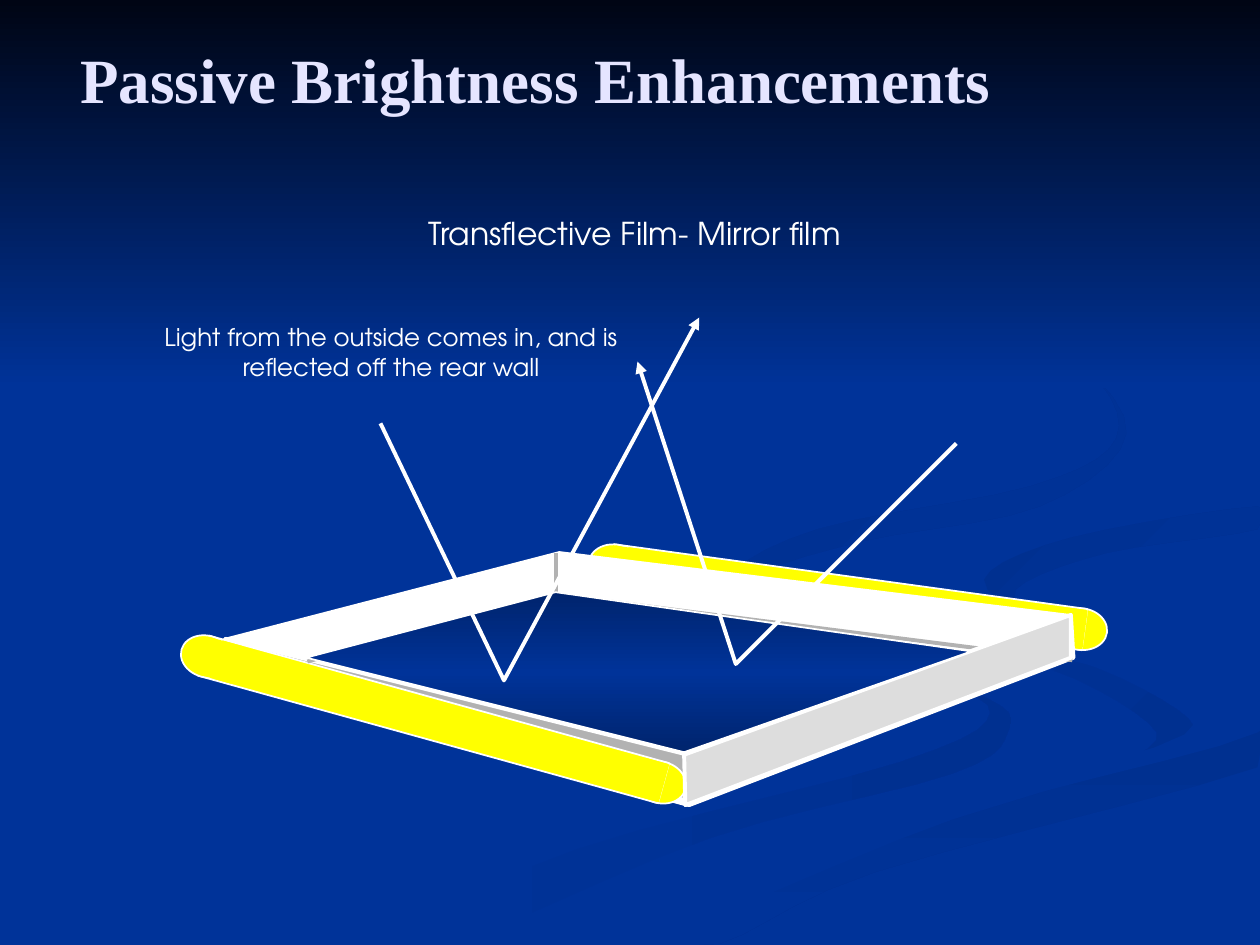
from copy import deepcopy
from math import cos, radians, sin

from pptx import Presentation
from pptx import util as u
from pptx.dml.color import RGBColor
from pptx.enum import shapes, text
from pptx.oxml import parse_xml
from pptx.oxml.ns import nsdecls, qn

BLUE = RGBColor(0x00, 0x33, 0x99)
SHADE = RGBColor(0x00, 0x30, 0x90)
NAVY = RGBColor(0x00, 0x24, 0x6D)
NIGHT = RGBColor(0x00, 0x05, 0x14)
LAVENDER = RGBColor(0xE5, 0xE5, 0xFF)
WHITE = RGBColor(0xFF, 0xFF, 0xFF)
YELLOW = RGBColor(0xFF, 0xFF, 0x00)
GRAY = RGBColor(0xB2, 0xB2, 0xB2)
LIGHT_GRAY = RGBColor(0xDD, 0xDD, 0xDD)

SERIF, SANS = "Times New Roman", "TeX Gyre Adventor"
TITLE = ("Passive Brightness Enhancements", (0, 0, 8.5, 1.25), 36, SERIF, LAVENDER)
LABELS = [
    ("Transflective Film- Mirror film", (3.15, 1.65, 3.77, 0.4), 18, SANS, WHITE),
    ("Light from the outside comes in, and is reflected off the rear wall",
     (1.14, 2.51, 3.93, 0.57), 14, SANS, WHITE),
]

SWIRLS = [
    ([(7.81, 5.53), (6.42, 5.07), (5.75, 4.6), (5.93, 4.91), (7.28, 5.35), (7.86, 5.66),
      (7.14, 6.05), (4.58, 6.74), (3, 7.49), (3.61, 7.49), (5.64, 6.65), (7.56, 6.14),
      (8, 5.81)], (BLUE, SHADE), 0),
    ([(9.43, 5.7), (8.7, 5.3), (7.58, 4.98), (7.24, 4.64), (7.55, 5.05), (8.54, 5.39),
      (9.18, 5.81), (8.94, 6.05), (9.32, 5.89)], (BLUE, SHADE), 45),
    ([(5.03, 7.49), (5.71, 7.49), (6.95, 6.92), (9.98, 6.09), (9.98, 5.81), (7.97, 6.38),
      (6.3, 6.93)], (SHADE, BLUE), 90),
    ([(7.25, 4.64), (7.93, 5.09), (9.05, 5.4), (9.4, 5.83), (7.43, 6.43), (4.77, 7.49),
      (5.19, 7.47), (7.65, 6.47), (9.99, 5.81), (9.99, 5.38), (8.48, 5.03), (7.82, 4.6),
      (8.65, 4.24), (9.99, 4.02), (9.99, 3.87), (8.08, 4.17)], (BLUE,), 0),
    ([(7.81, 4.6), (8.26, 4.96), (8.06, 4.68), (8.78, 4.39), (9.98, 4.2), (9.98, 4.02),
      (8.49, 4.27)], (SHADE, BLUE), 45),
    ([(6.83, 4.3), (8.25, 4.02), (8.94, 3.44), (8.43, 2.75), (7.62, 2.33), (8.62, 2.92),
      (8.86, 3.48), (8.18, 3.86), (6.49, 4.2), (5.77, 4.62), (6.22, 5), (5.96, 4.61)],
     (SHADE, BLUE), 45),
]
SKY = (0, 0, 10, 3.08)
CURVE_STEPS = 5

OVAL, BAR = shapes.MSO_SHAPE.OVAL, shapes.MSO_SHAPE.RECTANGLE
REAR_LAMP = (6.73, 4.74, 7.8)
FRONT_LAMP = (3.44, 5.71, 15.5)
LAMP_PARTS = [
    (OVAL, 1.87, 0.41, 0.33, WHITE), (BAR, 0, 3.79, 0.33, WHITE), (OVAL, -1.87, 0.41, 0.33, WHITE),
    (BAR, -1.75, 0.26, 0.31, None), (BAR, 1.8, 0.2, 0.31, None),
]

TRAY = [(4.44, 4.39), (1.78, 5.08), (1.79, 5.41), (5.47, 6.39), (8.52, 5.22), (8.5, 4.89)]
FRONT_WALL = [(1.79, 5.07), (1.82, 5.38), (5.47, 6.36), (5.46, 5.99)]
SIDE_WALL = [(5.43, 5.99), (5.44, 6.39), (8.5, 5.22), (8.5, 4.88)]
MIRROR = [(2.43, 5.22), (4.41, 4.7), (7.71, 5.17), (5.43, 5.97)]
INNER_CORNER = (4.41, 4.72)
INNER_ENDS = [(2.44, 5.25), (8.51, 5.24), (4.41, 4.39)]
RAYS = [[(3.02, 3.36), (4, 5.4), (5.55, 2.52)], [(7.59, 3.52), (5.84, 5.27), (5.06, 2.87)]]


def smooth(points):
    curve = []
    for index, start in enumerate(points):
        before, end = points[index - 1], points[(index + 1) % len(points)]
        after = points[(index + 2) % len(points)]
        for step in range(CURVE_STEPS):
            t = step / CURVE_STEPS
            x, y = (
                b + t / 2 * (c - a + t * (2 * a - 5 * b + 4 * c - d + t * (3 * b - a - 3 * c + d)))
                for a, b, c, d in zip(before, start, end, after)
            )
            curve.append((min(x, 10), min(y, 7.5)))
    return curve


def paint(shape, colours, angle=0, edge=None, width=2.25):
    shape.shadow.inherit = False
    if not colours:
        shape.fill.background()
    elif len(colours) == 1:
        shape.fill.solid()
        shape.fill.fore_color.rgb = colours[0]
    else:
        shape.fill.gradient()
        shape.fill.gradient_angle = -angle % 360
        stop_list = shape.element.spPr.find(qn("a:gradFill")).find(qn("a:gsLst"))
        for _ in colours[2:]:
            stop_list.append(deepcopy(stop_list[-1]))
        for index, (stop, colour) in enumerate(zip(shape.fill.gradient_stops, colours)):
            stop.color.rgb = colour
            stop.position = index / (len(colours) - 1)
    if edge is None:
        shape.line.fill.background()
    else:
        shape.line.color.rgb = edge
        shape.line.width = u.Pt(width)


def add_outline(page, points, colours, closed=True, **style):
    corners = [(u.Inches(x), u.Inches(y)) for x, y in points]
    builder = page.shapes.build_freeform(*corners[0], scale=1.0)
    builder.add_line_segments(corners[1:], close=closed)
    shape = builder.convert_to_shape()
    paint(shape, colours, **style)
    return shape


def add_preset(page, kind, place, colours, **style):
    shape = page.shapes.add_shape(kind, *map(u.Inches, place))
    paint(shape, colours, **style)
    return shape


def add_lamp(page, x, y, tilt):
    for kind, offset, width, height, edge in LAMP_PARTS:
        left = x + offset * cos(radians(tilt)) - width / 2
        top = y + offset * sin(radians(tilt)) - height / 2
        part = add_preset(page, kind, (left, top, width, height), [YELLOW], edge=edge, width=1)
        part.rotation = tilt


def add_label(page, words, place, size, face, colour, bold=False, wrap=True):
    box = page.shapes.add_textbox(*map(u.Inches, place))
    frame = box.text_frame
    frame.text = words
    frame.word_wrap = wrap
    frame.vertical_anchor = text.MSO_ANCHOR.MIDDLE if bold else text.MSO_ANCHOR.TOP
    para = frame.paragraphs[0]
    para.alignment = text.PP_ALIGN.CENTER
    font = para.runs[0].font
    font.size, font.name, font.bold = u.Pt(size), face, bold
    font.color.rgb = colour


def main():
    deck = Presentation()
    deck.slide_width, deck.slide_height = u.Inches(10), u.Inches(7.5)
    page = deck.slides.add_slide(deck.slide_layouts[6])
    page.background.fill.solid()
    page.background.fill.fore_color.rgb = BLUE

    for points, colours, angle in SWIRLS:
        add_outline(page, smooth(points), colours, angle=angle)
    add_preset(page, BAR, SKY, [NIGHT, BLUE], angle=90)
    add_label(page, *TITLE, bold=True)

    add_lamp(page, *REAR_LAMP)
    add_outline(page, TRAY, [WHITE], edge=WHITE)
    add_outline(page, FRONT_WALL, [GRAY], edge=WHITE)
    add_lamp(page, *FRONT_LAMP)
    for end in INNER_ENDS:
        ends = map(u.Inches, INNER_CORNER + end)
        edge = page.shapes.add_connector(shapes.MSO_CONNECTOR.STRAIGHT, *ends)
        edge.line.color.rgb = GRAY
        edge.line.width = u.Pt(2.25)
        edge.element.spPr.append(parse_xml(f"<a:effectLst {nsdecls('a')}/>"))
    add_outline(page, SIDE_WALL, [LIGHT_GRAY], edge=WHITE)
    add_outline(page, MIRROR, [NAVY, BLUE, NAVY], angle=90, edge=WHITE, width=1)

    for points in RAYS:
        ray = add_outline(page, points, [], closed=False, edge=WHITE)
        line = ray.element.spPr.find(qn("a:ln"))
        line.append(parse_xml(f'<a:tailEnd {nsdecls("a")} type="triangle"/>'))
    for label in LABELS:
        add_label(page, *label, wrap=label is not LABELS[0])
    deck.save("out.pptx")


if __name__ == "__main__":
    main()
